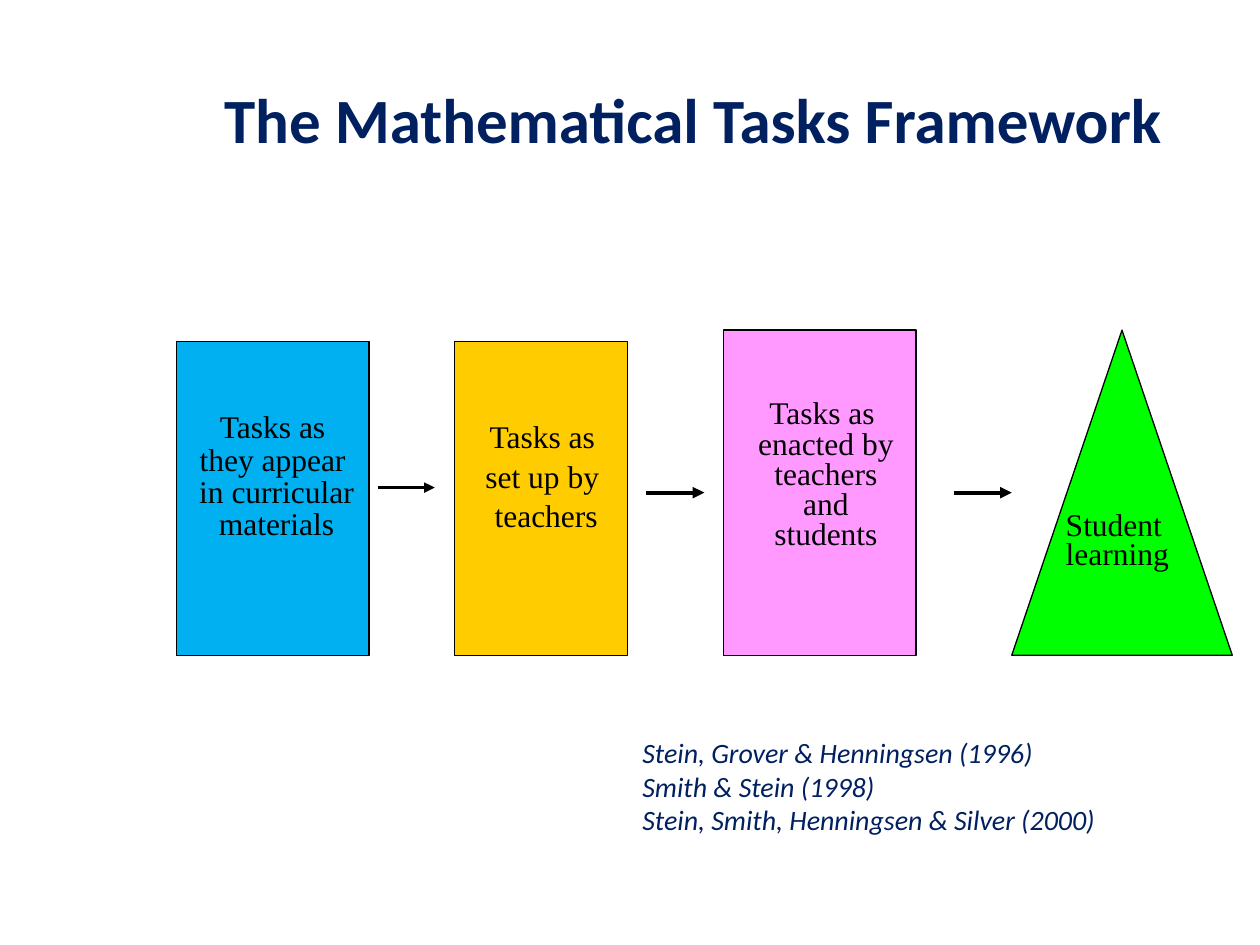
from lxml import etree
from pptx import Presentation, util as u
from pptx.dml.color import RGBColor
from pptx.enum import shapes as sh, text as tx
from pptx.oxml.ns import qn

INK = {"navy": "002060", "black": "000000", "blue": "00B0F0",
       "pink": "FF99FF", "gold": "FFCC00", "green": "00FF00"}
KIND = sh.MSO_SHAPE
MID = tx.PP_ALIGN.CENTER
LEFT = tx.PP_ALIGN.LEFT


class Deck:
    def __init__(self):
        self.prs = Presentation()
        self.prs.slide_width = u.Inches(10)
        self.prs.slide_height = u.Inches(7.5)
        self.slide = self.prs.slides.add_slide(self.prs.slide_layouts[5])
        self.items = self.slide.shapes

    def color(self, name):
        return RGBColor.from_string(INK[name])

    def fill_text(self, frame, lines, size, face, ink, align=LEFT, pitch=None,
                  after=0, bold=False, italic=False):
        for i, line in enumerate(lines):
            para = frame.paragraphs[0] if i == 0 else frame.add_paragraph()
            para.alignment = align
            para.space_before = u.Pt(0)
            para.space_after = u.Pt(after)
            if pitch:
                para.line_spacing = pitch
            run = para.add_run()
            run.text = line
            font = run.font
            font.size, font.name = u.Pt(size), face
            font.bold, font.italic = bold, italic
            font.color.rgb = self.color(ink)

    def title(self, line, box):
        head = self.items.title
        head.left, head.top, head.width, head.height = map(u.Inches, box)
        frame = head.text_frame
        frame.word_wrap = True
        frame.vertical_anchor = tx.MSO_ANCHOR.MIDDLE
        self.fill_text(frame, [line], 36, "Calibri", "navy", MID, bold=True)

    def shape(self, kind, box, fill, line=True):
        form = self.items.add_shape(kind, *map(u.Inches, box))
        form.shadow.inherit = False
        form.fill.solid()
        form.fill.fore_color.rgb = self.color(fill)
        if line:
            form.line.color.rgb = self.color("black")
            form.line.width = u.Pt(0.75)
        else:
            form.line.fill.background()
        return form

    def label(self, box, lines, fill, pitch, inset=0.05, after=0, wrap=True):
        frame = self.shape(KIND.RECTANGLE, box, fill, False).text_frame
        frame.word_wrap = wrap
        frame.vertical_anchor = tx.MSO_ANCHOR.TOP
        frame.margin_top = u.Inches(inset)
        self.fill_text(frame, lines, 18, "Times New Roman", "black", MID,
                       pitch, after)

    def text(self, box, lines, *style, **more):
        frame = self.items.add_textbox(*map(u.Inches, box)).text_frame
        frame.word_wrap = True
        self.fill_text(frame, lines, *style, **more)

    def arrow(self, left, right, y, width):
        ends = map(u.Inches, (left, y, right, y))
        line = self.items.add_connector(sh.MSO_CONNECTOR.STRAIGHT, *ends)
        line.line.color.rgb = self.color("black")
        line.line.width = u.Pt(width)
        props = line._element.spPr
        tip = etree.SubElement(props.find(qn("a:ln")), qn("a:tailEnd"))
        tip.set("type", "triangle")
        etree.SubElement(props, qn("a:effectLst"))


def main():
    deck = Deck()
    deck.title("The Mathematical Tasks Framework", (1.4, 0.44, 8.2, 1))
    deck.text((5, 5.79, 4.65, 1.07),
              ["Stein, Grover & Henningsen (1996)", "Smith & Stein (1998)",
               "Stein, Smith, Henningsen & Silver (2000)"],
              16, "Calibri", "navy", italic=True)

    base = 5.2
    for kind, left, top, width, fill in [
            (KIND.RECTANGLE, 1.4, 2.71, 1.53, "blue"),
            (KIND.RECTANGLE, 5.74, 2.62, 1.53, "pink"),
            (KIND.RECTANGLE, 3.61, 2.71, 1.37, "gold"),
            (KIND.ISOSCELES_TRIANGLE, 8.03, 2.62, 1.75, "green")]:
        deck.shape(kind, (left, top, width, base - top), fill)

    deck.arrow(3, 3.45, 3.87, 2)
    for left in (7.57, 5.13):
        deck.arrow(left, left + 0.46, 3.91, 2.25)

    deck.label((3.73, 3.23, 1.21, 1.42),
               ["Tasks as ", "set up by ", "teachers"], "gold", 1,
               inset=0.08, after=1, wrap=False)
    deck.label((1.47, 3.23, 1.45, 1.59),
               ["Tasks as ", "they appear ", "in curricular ", "materials"],
               "blue", 0.85)
    deck.label((5.85, 3.06, 1.41, 1.94),
               ["Tasks as ", "enacted by", "teachers and", "students"],
               "pink", 0.8, inset=0.12)
    deck.text((8.36, 4.03, 1.19, 0.78), ["Student", "learning"],
              18, "Times New Roman", "black", pitch=0.75)
    deck.prs.save("out.pptx")


if __name__ == "__main__":
    main()
